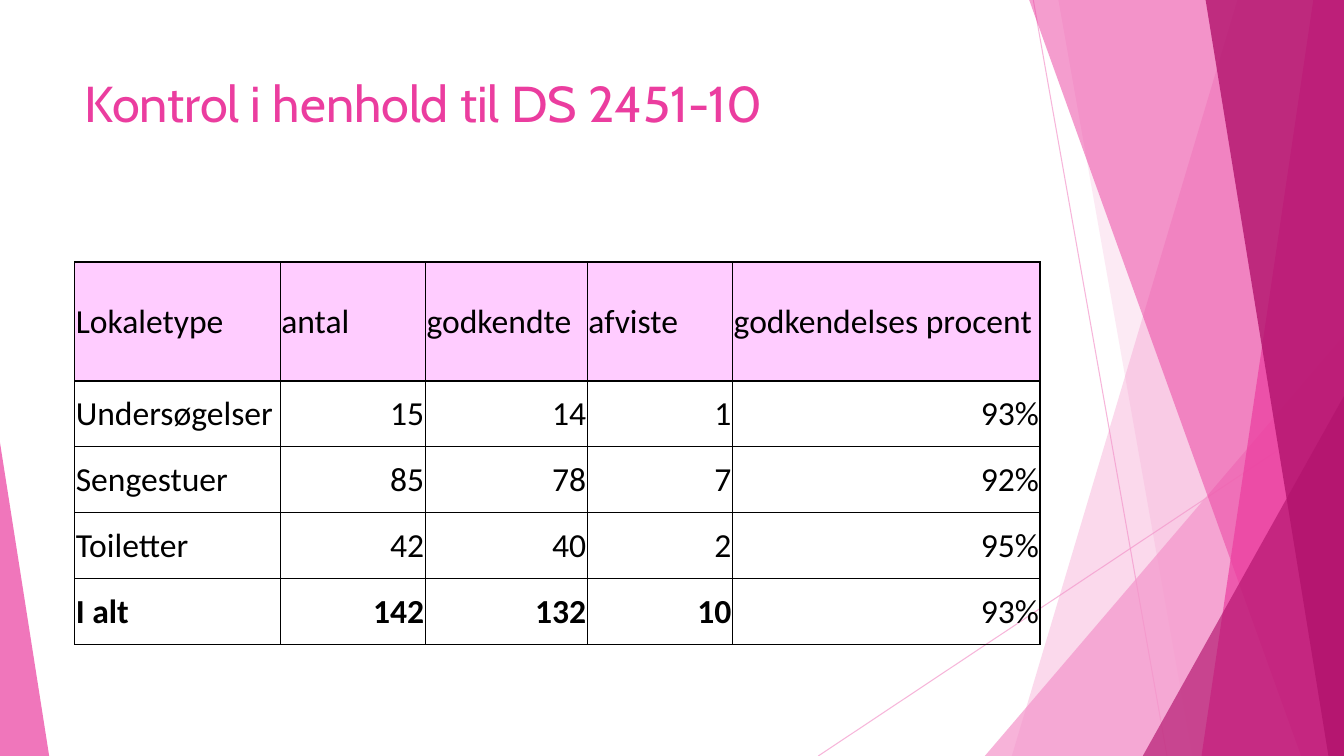
from lxml import etree
from pptx import Presentation
from pptx.dml.color import RGBColor
from pptx.enum.shapes import MSO_CONNECTOR, MSO_SHAPE
from pptx.enum.text import MSO_ANCHOR, PP_ALIGN
from pptx.oxml.ns import qn
from pptx.util import Cm, Pt

LINE = MSO_CONNECTOR.STRAIGHT
TRIANGLE = MSO_SHAPE.ISOSCELES_TRIANGLE
TOP, MIDDLE = MSO_ANCHOR.TOP, MSO_ANCHOR.MIDDLE
LEFT, RIGHT = PP_ALIGN.LEFT, PP_ALIGN.RIGHT

WIDTH, HEIGHT = 33.87, 19.05
LIGHT, PINK, DARK = "F496CB", "EB3D9F", "B2136D"
HEAD, BLACK = "FFCCFF", "000000"


def color(code):
    return RGBColor.from_string(code)


def fade(fill, code, alpha):
    """Fill with a solid colour at the given opacity in percent."""
    fill.solid()
    fill.fore_color.rgb = color(code)
    tint = fill._xPr.find(qn("a:solidFill"))[0]
    etree.SubElement(tint, qn("a:alpha"), val=str(alpha * 1000))


class Deck:
    def __init__(self):
        self.prs = Presentation()
        self.prs.slide_width, self.prs.slide_height = Cm(WIDTH), Cm(HEIGHT)
        self.slide = self.prs.slides.add_slide(self.prs.slide_layouts[5])
        self.shapes = self.slide.shapes

    def style(self, run, font, size, code, bold=False):
        run.font.name, run.font.size, run.font.bold = font, Pt(size), bold
        run.font.color.rgb = color(code)

    def title(self, text, x, y, w, h):
        box = self.shapes.title
        box.left, box.top, box.width, box.height = Cm(x), Cm(y), Cm(w), Cm(h)
        frame = box.text_frame
        frame.text = text
        frame.vertical_anchor = TOP
        frame.paragraphs[0].alignment = LEFT
        self.style(frame.paragraphs[0].runs[0], "Cabin", 36, PINK)

    def line(self, x1, y1, x2, y2):
        line = self.shapes.add_connector(LINE, Cm(x1), Cm(y1), Cm(x2), Cm(y2))
        line.line.width = Pt(0.75)
        fade(line.line.fill, LIGHT, 70)
        etree.SubElement(line._element.spPr, qn("a:effectLst"))

    def paint(self, shape, code, alpha):
        shape.shadow.inherit = False
        fade(shape.fill, code, alpha)
        shape.line.fill.background()

    def band(self, top, foot, code, alpha):
        """Full-height area from a slanted left edge to the right margin."""
        pen = self.shapes.build_freeform(Cm(top), Cm(-0.02))
        pen.add_line_segments([(Cm(WIDTH), Cm(-0.02)), (Cm(WIDTH), Cm(HEIGHT)),
                               (Cm(foot), Cm(HEIGHT))], close=True)
        self.paint(pen.convert_to_shape(), code, alpha)

    def wedge(self, x, y, w, apex, code, alpha):
        """Triangle standing on the bottom edge."""
        shape = self.shapes.add_shape(TRIANGLE, Cm(x), Cm(y), Cm(w), Cm(HEIGHT - y))
        shape.adjustments[0] = apex
        self.paint(shape, code, alpha)

    def border(self, cell):
        props = cell._tc.get_or_add_tcPr()
        for place, side in enumerate(("lnL", "lnR", "lnT", "lnB")):
            edge = etree.Element(qn("a:" + side), w=str(Pt(1)))
            fill = etree.SubElement(edge, qn("a:solidFill"))
            etree.SubElement(fill, qn("a:srgbClr"), val=BLACK)
            props.insert(place, edge)

    def cell(self, cell, text, align, bold, head):
        cell.margin_left = cell.margin_right = cell.margin_top = Cm(0.03)
        cell.margin_bottom = 0
        cell.vertical_anchor = MIDDLE
        cell.text_frame.text = text
        para = cell.text_frame.paragraphs[0]
        para.alignment = align
        self.style(para.runs[0], "Calibri", 24, BLACK, bold)
        if head:
            cell.fill.solid()
            cell.fill.fore_color.rgb = color(HEAD)
        else:
            cell.fill.background()
        self.border(cell)

    def table(self, x, y, widths, heights, rows):
        table = self.shapes.add_table(
            len(rows), len(widths), Cm(x), Cm(y),
            Cm(sum(widths)), Cm(sum(heights))).table
        table.horz_banding = table.first_row = False
        for col, width in zip(table.columns, widths):
            col.width = Cm(width)
        for row, height in zip(table.rows, heights):
            row.height = Cm(height)
        last = len(rows) - 1
        for r, row in enumerate(rows):
            for c, text in enumerate(row):
                align = RIGHT if r and c else LEFT
                bold = r == last and c < len(row) - 1
                self.cell(table.cell(r, c), text, align, bold, r == 0)


def main():
    deck = Deck()

    # Decoration, back to front
    deck.line(26.04, 0, 29.41, HEIGHT)
    deck.line(WIDTH, 10.24, 20.62, HEIGHT)
    deck.band(31.19, 25.5, LIGHT, 36)
    deck.band(26.67, 30.05, LIGHT, 20)
    deck.wedge(24.82, 8.46, 9.05, 1, LIGHT, 72)
    deck.band(25.93, 32.79, PINK, 50)
    deck.band(33.1, 30.28, PINK, 70)
    deck.band(30.38, 33.48, DARK, 80)
    deck.wedge(28.8, 9.98, 5.07, 1, DARK, 66)
    deck.wedge(0, 11.15, 1.24, 0, PINK, 70)

    # Title
    deck.title("Kontrol i henhold til DS 2451-10", 1.88, 1.7, 23.88, 3.66)

    # Results by room type
    deck.table(1.88, 6.6, [5.18, 3.66, 4.08, 3.66, 7.75], [3] + [1.66] * 4, [
        ["Lokaletype", "antal", "godkendte", "afviste", "godkendelses procent"],
        ["Undersøgelser", "15", "14", "1", "93%"],
        ["Sengestuer", "85", "78", "7", "92%"],
        ["Toiletter", "42", "40", "2", "95%"],
        ["I alt", "142", "132", "10", "93%"],
    ])

    deck.prs.save("out.pptx")


if __name__ == "__main__":
    main()
